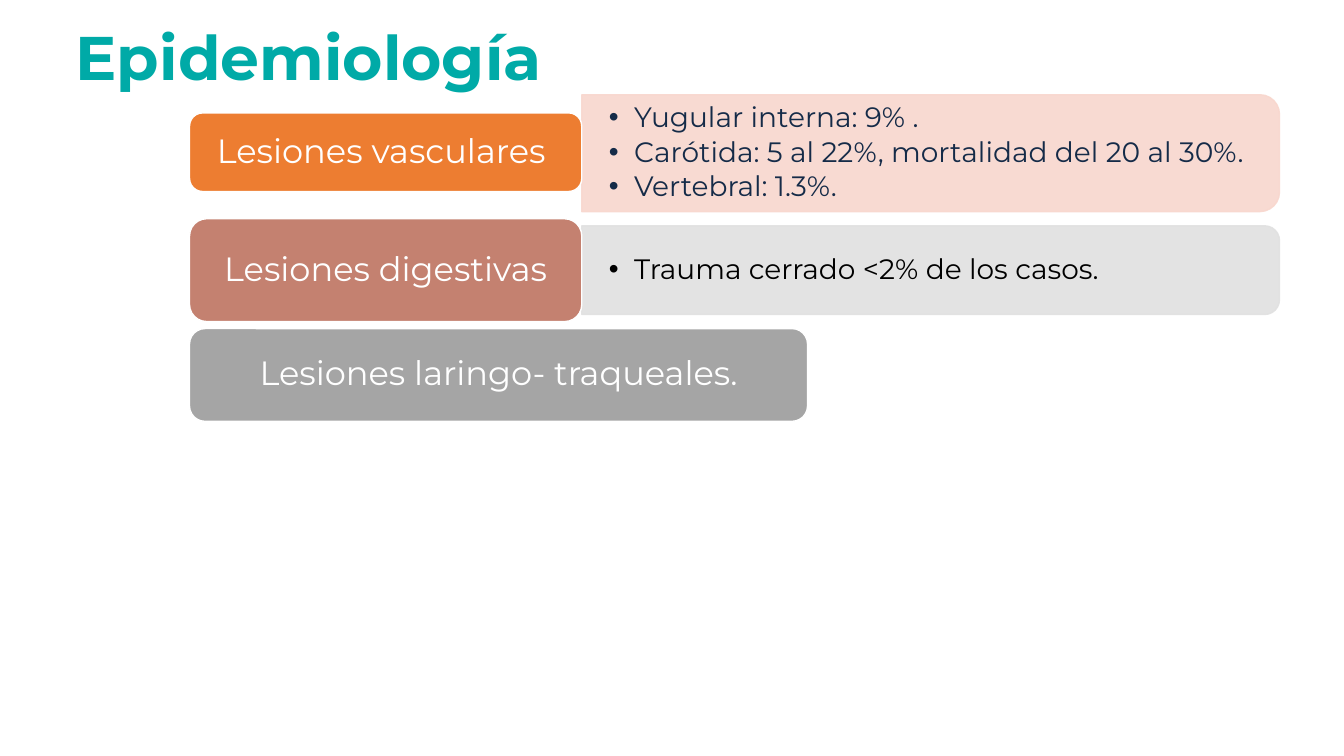
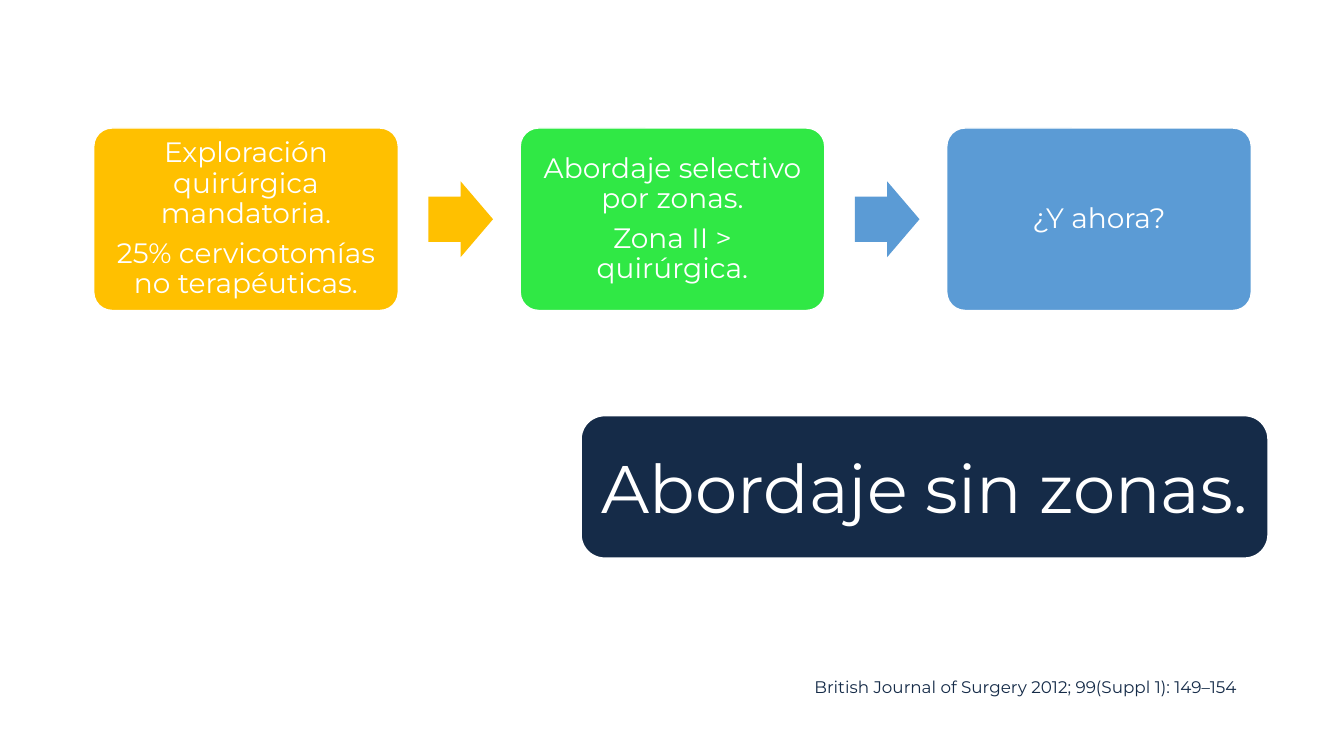
from lxml import etree
from pptx import Presentation
from pptx.dml.color import RGBColor
from pptx.enum.shapes import MSO_SHAPE
from pptx.enum.text import MSO_ANCHOR, PP_ALIGN
from pptx.oxml.ns import qn
from pptx.util import Inches, Pt

ROUND = MSO_SHAPE.ROUNDED_RECTANGLE
PANEL = MSO_SHAPE.ROUND_2_SAME_RECTANGLE
ARROW = MSO_SHAPE.RIGHT_ARROW
MIDDLE = MSO_ANCHOR.MIDDLE
LEFT, CENTER = PP_ALIGN.LEFT, PP_ALIGN.CENTER

FONT = "Montserrat"
WHITE = RGBColor(0xFF, 0xFF, 0xFF)
BLACK = RGBColor(0x00, 0x00, 0x00)
NAVY = RGBColor(0x15, 0x2B, 0x48)
TEAL = RGBColor(0x00, 0xAA, 0xA7)
ORANGE = RGBColor(0xED, 0x7D, 0x31)
PEACH = RGBColor(0xF8, 0xD7, 0xCE)
CLAY = RGBColor(0xC4, 0x81, 0x70)
SILVER = RGBColor(0xE1, 0xE1, 0xE1)
GRAY = RGBColor(0xA5, 0xA5, 0xA5)
GOLD = RGBColor(0xFF, 0xC0, 0x00)
GREEN = RGBColor(0x30, 0xE8, 0x45)
BLUE = RGBColor(0x5B, 0x9B, 0xD5)


def add_bullet(para):
    props = para._p.get_or_add_pPr()
    props.set("marL", str(Inches(0.25)))
    props.set("indent", str(-Inches(0.25)))
    etree.SubElement(props, qn("a:buFont")).set("typeface", "Arial")
    etree.SubElement(props, qn("a:buChar")).set("char", "•")


def write(frame, lines, size, color, align=LEFT, bold=False,
          spacing=0.9, after=0, bullet=False):
    for i, line in enumerate(lines):
        para = frame.paragraphs[0] if i == 0 else frame.add_paragraph()
        if bullet:
            add_bullet(para)
        para.alignment = align
        para.line_spacing = spacing
        para.space_after = Pt(after)
        run = para.add_run()
        run.text = line
        run.font.name = FONT
        run.font.size = Pt(size)
        run.font.bold = bold
        run.font.color.rgb = color


def set_inset(frame, side, end):
    frame.margin_left = frame.margin_right = Inches(side)
    frame.margin_top = frame.margin_bottom = Inches(end)


def add_box(slide, kind, box, fill, line=None, width=1):
    shape = slide.shapes.add_shape(kind, *[Inches(v) for v in box])
    shape.shadow.inherit = False
    shape.fill.solid()
    shape.fill.fore_color.rgb = fill
    if line is None:
        shape.line.fill.background()
    else:
        shape.line.color.rgb = line
        shape.line.width = Pt(width)
    return shape


def add_card(slide, box, fill, lines, size, inset=0.1, curve=None,
             width=1, spacing=0.9, after=0):
    card = add_box(slide, ROUND, box, fill, WHITE, width)
    if curve is not None:
        card.adjustments[0] = curve
    frame = card.text_frame
    frame.word_wrap = True
    frame.vertical_anchor = MIDDLE
    set_inset(frame, inset, inset)
    write(frame, lines, size, WHITE, CENTER, spacing=spacing, after=after)


def add_text(slide, box, wrap=True):
    frame = slide.shapes.add_textbox(*[Inches(v) for v in box]).text_frame
    frame.word_wrap = wrap
    return frame


def add_panel(slide, box, fill, lines, color):
    left, top, width, height = box
    turned = (left + (width - height) / 2, top + (height - width) / 2,
              height, width)
    panel = add_box(slide, PANEL, turned, fill, fill)
    panel.rotation = 90
    for tint in panel._element.spPr.iter(qn("a:srgbClr")):
        etree.SubElement(tint, qn("a:alpha")).set("val", "90000")
    frame = add_text(slide, (left, top, width - 0.05, height))
    frame.vertical_anchor = MIDDLE
    set_inset(frame, 0.27, 0.05)
    write(frame, lines, 20, color, after=3, bullet=True)


def add_title(slide, text):
    title = slide.shapes.title
    title.left, title.top = Inches(0.65), Inches(0.09)
    title.width, title.height = Inches(9.09), Inches(1.03)
    title.text_frame.vertical_anchor = MIDDLE
    write(title.text_frame, [text], 44, TEAL, bold=True)


def add_lesions(slide, left, top):
    side, wide = 3.89, 6.92
    add_panel(slide, (left + side, top, wide, 1.16), PEACH, [
        "Yugular interna: 9% .",
        "Carótida: 5 al 22%, mortalidad del 20 al 30%.",
        "Vertebral: 1.3%."], NAVY)
    add_panel(slide, (left + side, top + 1.3, wide, 0.88), SILVER,
              ["Trauma cerrado <2% de los casos."], BLACK)
    labels = [
        (0.18, side, 0.78, ORANGE, "Lesiones vasculares "),
        (1.23, side, 1.02, CLAY, "Lesiones digestivas"),
        (2.32, 6.13, 0.92, GRAY, "Lesiones laringo- traqueales."),
    ]
    for drop, width, height, fill, text in labels:
        add_card(slide, (left, top + drop, width, height), fill, [text], 24)


def add_flow(slide, left, top):
    width, height, step = 3.02, 1.81, 4.23
    cards = [
        (GOLD, ["Exploración quirúrgica mandatoria.",
                "25% cervicotomías no terapéuticas."]),
        (GREEN, ["Abordaje selectivo por zonas.", "Zona II > quirúrgica."]),
        (BLUE, ["¿Y ahora?"]),
    ]
    for i, (fill, lines) in enumerate(cards):
        add_card(slide, (left + i * step, top, width, height), fill, lines,
                 20, inset=0.13, curve=0.1, after=7)
    for i, fill in enumerate([GOLD, BLUE]):
        spot = (left + i * step + width + 0.3, top + (height - 0.75) / 2)
        arrow = add_box(slide, ARROW, (*spot, 0.64, 0.75), fill)
        arrow.adjustments[0] = 0.6
        arrow.adjustments[1] = 0.5


def add_cite(slide, box, text):
    write(add_text(slide, box, wrap=False), [text], 12, NAVY, spacing=1)


def main():
    deck = Presentation()
    deck.slide_width, deck.slide_height = Inches(13.33), Inches(7.5)

    slide = deck.slides.add_slide(deck.slide_layouts[5])
    add_title(slide, "Epidemiología")
    add_lesions(slide, 1.88, 0.94)

    slide = deck.slides.add_slide(deck.slide_layouts[6])
    add_flow(slide, 0.93, 1.27)
    add_card(slide, (5.76, 4.12, 6.82, 1.42), NAVY, ["Abordaje sin zonas."],
             48, width=1.5, spacing=1)
    add_cite(slide, (7.98, 6.66, 4.44, 0.3),
             "British Journal of Surgery 2012; 99(Suppl 1): 149–154")

    deck.save("out.pptx")


if __name__ == "__main__":
    main()
